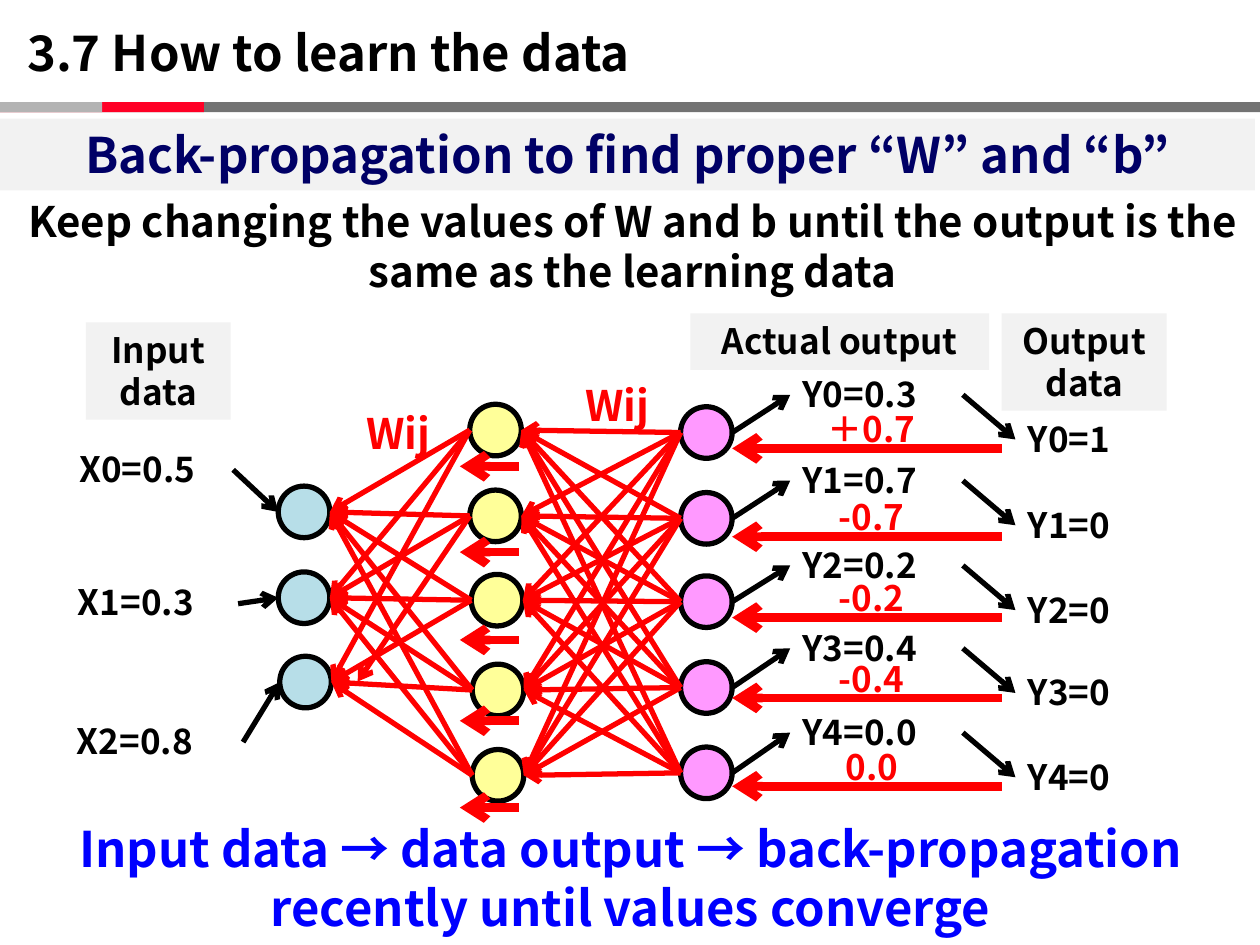
from itertools import product

from lxml.etree import SubElement
from pptx import Presentation
from pptx.dml.color import RGBColor
from pptx.enum.shapes import MSO_CONNECTOR, MSO_SHAPE
from pptx.enum.text import MSO_ANCHOR, PP_ALIGN
from pptx.oxml.ns import qn
from pptx.util import Cm, Pt

THEME = {
    "font": "Noto Sans CJK JP",
    "black": "000000", "red": "FF0000", "navy": "000066", "blue": "0000FF",
    "panel": "F2F2F2", "bar": "737373", "bar_red": "FF0026", "bar_light": "B3B3B3",
    "input": "B7DEE8", "hidden": "FFFF99", "output": "FF99FF",
    "heading": 28, "statement": 24, "label": 20,
    "thin": 3, "thick": 5,
}

# Content: boxes are (left, top, width, height) in cm
SIZE = (25.4, 19.05)
TITLE = "3.7 How to learn the data"
BANNER = "Back-propagation to find proper “W” and “b”"
STATEMENT = ("Keep changing the values of W and b until the output is the "
             "same as the learning data")
CONCLUSION = ["Input data → data output → back-propagation",
              "recently until values converge"]
BARS = [("bar", 25.4), ("bar_red", 4.11), ("bar_light", 2.06)]
PANELS = [
    (["Input data"], (1.73, 6.5, 2.92, 1.96)),
    (["Actual output"], (13.92, 6.32, 6.02, 1.14)),
    (["Output", "data"], (20.19, 6.32, 3.33, 1.96)),
]
WEIGHTS = [("Wij", (11.33, 7.52, 2.24, 1.27)), ("Wij", (6.91, 8.1, 2.24, 1.27))]

# Left and top of every node
NODE = 1.04
LAYERS = {
    "input": [(5.61, 9.8), (5.61, 11.53), (5.64, 13.23)],
    "hidden": [(9.47, 8.15), (9.47, 9.88), (9.5, 11.58), (9.52, 13.39), (9.52, 15.11)],
    "output": [(13.72, 8.2), (13.72, 9.93), (13.72, 11.61), (13.72, 13.34), (13.72, 15.06)],
}
SHORT_LINKS = {("input", 2, 1): (7.21, 13.74)}  # this link stops before its node

# Input text, text left and top, arrow start
INPUTS = [
    ("X0=0.5", (1.35, 8.89), (4.7, 9.47)),
    ("X1=0.3", (1.32, 11.58), (4.8, 12.17)),
    ("X2=0.8", (1.3, 14.38), (4.9, 14.96)),
]
# Actual, error, target; actual top, error arrow y, update arrow y
ROWS = [
    ("Y0=0.3", "＋0.7", "Y0=1", 7.39, 9.04, 9.4),
    ("Y1=0.7", "-0.7", "Y1=0", 9.12, 10.82, 11.13),
    ("Y2=0.2", "-0.2", "Y2=0", 10.83, 12.45, 12.9),
    ("Y3=0.4", "-0.4", "Y3=0", 12.5, 14.07, 14.53),
    ("Y4=0.0", "0.0", "Y4=0", 14.2, 15.85, 16.28),
]
LABEL_HEIGHT = 1.14
TARGET_DROP = 0.9
ERROR_RISE = 0.95

deck = Presentation()
deck.slide_width, deck.slide_height = map(Cm, SIZE)
slide = deck.slides.add_slide(deck.slide_layouts[6])
shapes = slide.shapes


def color(name):
    return RGBColor.from_string(THEME[name])


def add_fill(preset, box, fill, outlined=False):
    body = shapes.add_shape(preset, *map(Cm, box))
    body.shadow.inherit = False
    body.fill.solid()
    body.fill.fore_color.rgb = color(fill)
    if outlined:
        body.line.color.rgb = color("black")
        body.line.width = Pt(THEME["thin"])
    else:
        body.line.fill.background()
    return body


def add_text(lines, box, size="label", ink="black", align=PP_ALIGN.CENTER,
             fill=None, wrap=True):
    if fill:
        holder = add_fill(MSO_SHAPE.RECTANGLE, box, fill)
    else:
        holder = shapes.add_textbox(*map(Cm, box))
    frame = holder.text_frame
    frame.word_wrap = wrap
    frame.vertical_anchor = MSO_ANCHOR.TOP
    for index, line in enumerate(lines):
        paragraph = frame.add_paragraph() if index else frame.paragraphs[0]
        paragraph.alignment = align
        run = paragraph.add_run()
        run.text = line
        run.font.name = THEME["font"]
        run.font.size = Pt(THEME[size])
        run.font.bold = True
        run.font.color.rgb = color(ink)
        SubElement(run.font._element, qn("a:ea"), typeface=THEME["font"])
    return holder


def add_arrow(start, end, ink="black", width="thin"):
    arrow = shapes.add_connector(MSO_CONNECTOR.STRAIGHT, *map(Cm, (*start, *end)))
    arrow.line.color.rgb = color(ink)
    arrow.line.width = Pt(THEME[width])
    SubElement(arrow.line._get_or_add_ln(), qn("a:tailEnd"), type="arrow")
    SubElement(arrow._element.spPr, qn("a:effectLst"))
    return arrow


def left_of(node):
    return node[0], node[1] + NODE / 2


def right_of(node):
    return node[0] + NODE, node[1] + NODE / 2


# Header and banner
for fill, width in BARS:
    add_fill(MSO_SHAPE.RECTANGLE, (0, 2.06, width, 0.2), fill)
add_text([TITLE], (0.3, 0.33, 14.02, 1.45), size="heading", align=PP_ALIGN.LEFT, wrap=False)
add_text([BANNER], (0, 2.39, 25.3, 1.45), size="heading", ink="navy", fill="panel")
add_text([STATEMENT], (0.1, 3.81, 25.3, 2.31), size="statement")

# Network nodes
for layer, nodes in LAYERS.items():
    for node in nodes:
        add_fill(MSO_SHAPE.OVAL, (*node, NODE, NODE), layer, outlined=True)

# Links running backwards between neighbouring layers
for near, far in (("input", "hidden"), ("hidden", "output")):
    for (i, left), (j, right) in product(enumerate(LAYERS[near]), enumerate(LAYERS[far])):
        tip = SHORT_LINKS.get((near, i, j), right_of(left))
        add_arrow(left_of(right), tip, ink="red")

# Input values
for (value, place, start), node in zip(INPUTS, LAYERS["input"]):
    add_text([value], (*place, 3.8, LABEL_HEIGHT), align=PP_ALIGN.LEFT)
    add_arrow(start, left_of(node))

# Panels and weight labels
for lines, box in PANELS:
    add_text(lines, box, fill="panel")
for weight, box in WEIGHTS:
    add_text([weight], box, size="statement", ink="red")

# Output rows: actual value, target value, error and update
for (actual, error, target, top, error_y, update_y), node in zip(ROWS, LAYERS["output"]):
    actual_label = add_text([actual], (15.93, top, 3.48, LABEL_HEIGHT), align=PP_ALIGN.LEFT)
    target_label = add_text([target], (20.47, top + TARGET_DROP, 3, LABEL_HEIGHT),
                            align=PP_ALIGN.LEFT)
    start = right_of(node)
    add_arrow(start, start).end_connect(actual_label, 1)
    comparison = add_arrow(start, start)
    comparison.begin_connect(actual_label, 3)
    comparison.end_connect(target_label, 1)
    add_arrow((20.19, error_y), (14.76, error_y), ink="red", width="thick")
    add_arrow((10.46, update_y), (9.27, update_y), ink="red", width="thick")
    add_text([error], (15.34, error_y - ERROR_RISE, 4.47, LABEL_HEIGHT), ink="red")

# Conclusion
add_text(CONCLUSION, (0.1, 16.38, 25.22, 2.64), size="heading", ink="blue")

deck.save("out.pptx")
